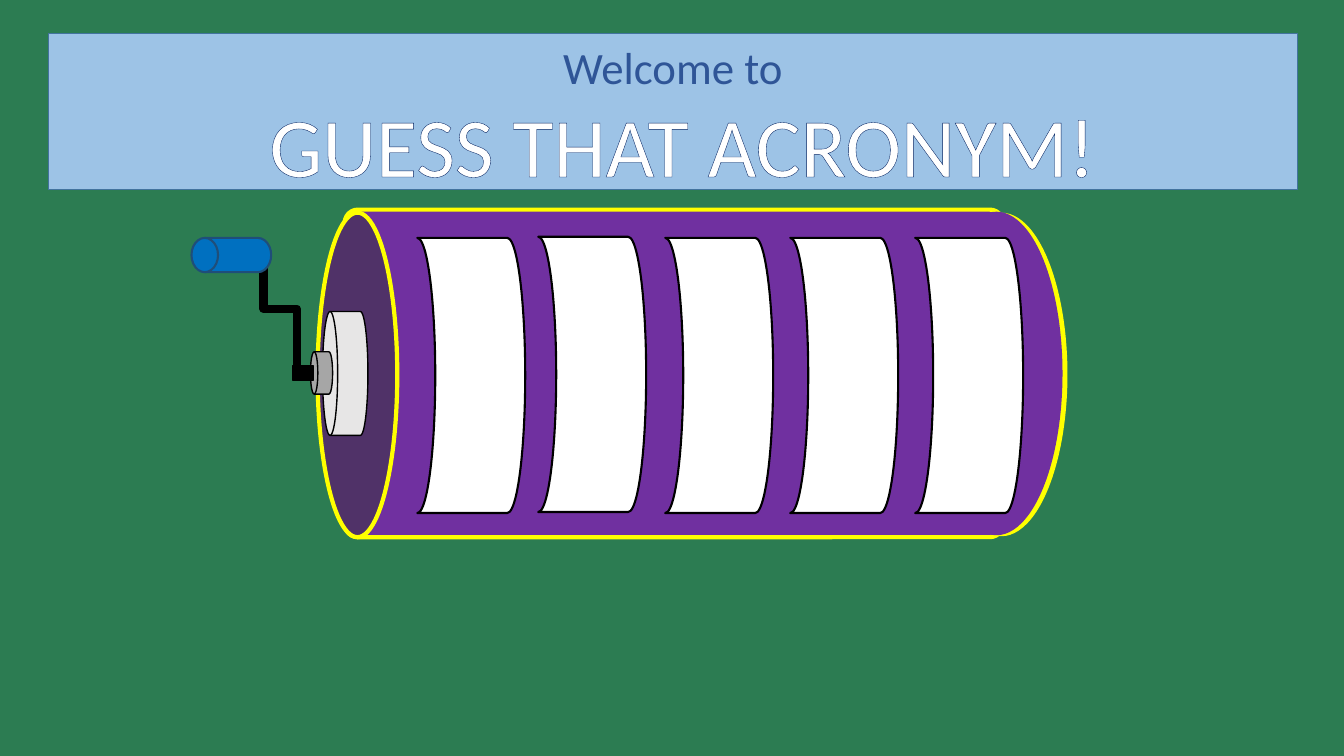
from lxml.etree import SubElement
from pptx import Presentation
from pptx.dml.color import RGBColor
from pptx.enum.shapes import MSO_CONNECTOR, MSO_SHAPE
from pptx.enum.text import MSO_AUTO_SIZE, PP_ALIGN
from pptx.oxml.ns import qn
from pptx.util import Inches, Pt

W, H = Inches(13.33), Inches(7.5)
COLORS = {
    "green": "2C7C52", "yellow": "FFFF00", "purple": "7030A0", "plum": "503268",
    "pale": "E7E6E6", "gray": "A6A6A6", "black": "000000", "white": "FFFFFF",
    "blue": "0070C0", "deep": "1F4E79", "sky": "9DC3E6", "edge": "43739E",
    "title": "2F5597", "navy": "002060",
}
DRUM = MSO_SHAPE.FLOWCHART_DIRECT_ACCESS_STORAGE
PANELS = [(31.05, 31.47), (40.05, 31.33), (49.5, 31.47), (58.8, 31.47), (68.1, 31.47)]
LINES = [
    ("Welcome to", {"size": Pt(32), "name": "Calibri"}, "title"),
    (" GUESS THAT ACRONYM!", {"size": Pt(60), "name": "Calibri"}, "white"),
]


def rgb(name):
    """Return the named colour."""
    return RGBColor.from_string(COLORS[name])


def box(x, y, w, h):
    """Turn percentages of the slide into lengths."""
    return [int(share * side / 100) for share, side in zip((x, y, w, h), (W, H, W, H))]


def add_part(group, kind, at, fill, line=None, width=1, flip=False):
    """Add a filled shape, outlined and mirrored on request."""
    sp = group.shapes.add_shape(kind, *box(*at))
    sp.shadow.inherit = False
    sp.fill.solid()
    sp.fill.fore_color.rgb = rgb(fill)
    if line:
        sp.line.color.rgb = rgb(line)
        sp.line.width = Pt(width)
    else:
        sp.line.fill.background()
    if flip:
        sp._element.spPr.find(qn("a:xfrm")).set("flipH", "1")
    return sp


def add_crank_arm(group, at, width):
    """Add the bent arm, turned upright."""
    x, y, w, h = box(*at)
    arm = group.shapes.add_connector(MSO_CONNECTOR.ELBOW, x, y, x + w, y + h)
    arm.line.color.rgb = rgb("black")
    arm.line.width = Pt(width)
    xfrm = arm._element.spPr.find(qn("a:xfrm"))
    for key, value in {"rot": "16200000", "flipV": "1"}.items():
        xfrm.set(key, value)
    SubElement(arm._element.spPr, qn("a:effectLst"))


def outline_text(r, color, width):
    """Draw a line around the letters of a run."""
    rPr = r._r.get_or_add_rPr()
    ln = SubElement(rPr, qn("a:ln"), w=str(int(Pt(width))))
    fill = SubElement(ln, qn("a:solidFill"))
    SubElement(fill, qn("a:srgbClr"), val=COLORS[color])
    rPr.insert(0, ln)


def add_heading(group, at):
    """Add the centred two-line heading."""
    tf = group.shapes.add_textbox(*box(*at)).text_frame
    tf.word_wrap = True
    tf.auto_size = MSO_AUTO_SIZE.SHAPE_TO_FIT_TEXT
    for i, (text, style, color) in enumerate(LINES):
        p = tf.add_paragraph() if i else tf.paragraphs[0]
        p.alignment = PP_ALIGN.CENTER
        r = p.add_run()
        r.text = text
        for key, value in style.items():
            setattr(r.font, key, value)
        r.font.color.rgb = rgb(color)
        outline_text(r, "navy", 1.75)


def add_wheel(s):
    """Add the barrel with its crank and blank panels."""
    wheel = s.shapes.add_group_shape()
    add_part(wheel, MSO_SHAPE.OVAL, (69.6, 28.13, 9.83, 42.8), "yellow")
    barrel = add_part(wheel, MSO_SHAPE.ROUNDED_RECTANGLE,
                      (25.65, 27.73, 48.98, 43.33), "purple", "yellow", 3)
    barrel.adjustments[0] = 0.04
    add_part(wheel, MSO_SHAPE.OVAL, (23.63, 28.13, 5.93, 42.93), "plum", "yellow", 3)
    add_part(wheel, DRUM, (24, 41.2, 3.38, 16.4), "pale", "black", flip=True)
    add_part(wheel, MSO_SHAPE.OVAL, (69.23, 28, 9.83, 42.8), "purple")
    add_part(wheel, DRUM, (23.1, 46.53, 1.65, 5.6), "gray", "black", flip=True)
    add_part(wheel, MSO_SHAPE.RECTANGLE, (21.75, 48.4, 1.58, 1.87), "black", "black")
    add_crank_arm(wheel, (15.98, 38.67, 9.75, 4.4), 6)
    add_part(wheel, DRUM, (14.25, 31.47, 5.93, 4.53), "blue", "deep", 1.5, True)
    for x, y in PANELS:
        add_part(wheel, MSO_SHAPE.FLOWCHART_STORED_DATA, (x, y, 8.03, 36.4),
                 "white", "black", 1.5, True)


def add_banner(s):
    """Add the heading on its band."""
    banner = s.shapes.add_group_shape()
    add_part(banner, MSO_SHAPE.RECTANGLE, (3.6, 4.4, 92.93, 20.67), "sky", "edge")
    add_heading(banner, (17.48, 4.53, 65.18, 22))


def main():
    """Build and save the slide."""
    prs = Presentation()
    prs.slide_width, prs.slide_height = W, H
    s = prs.slides.add_slide(prs.slide_layouts[6])
    s.background.fill.solid()
    s.background.fill.fore_color.rgb = rgb("green")
    add_wheel(s)
    add_banner(s)
    prs.save("out.pptx")


if __name__ == "__main__":
    main()
